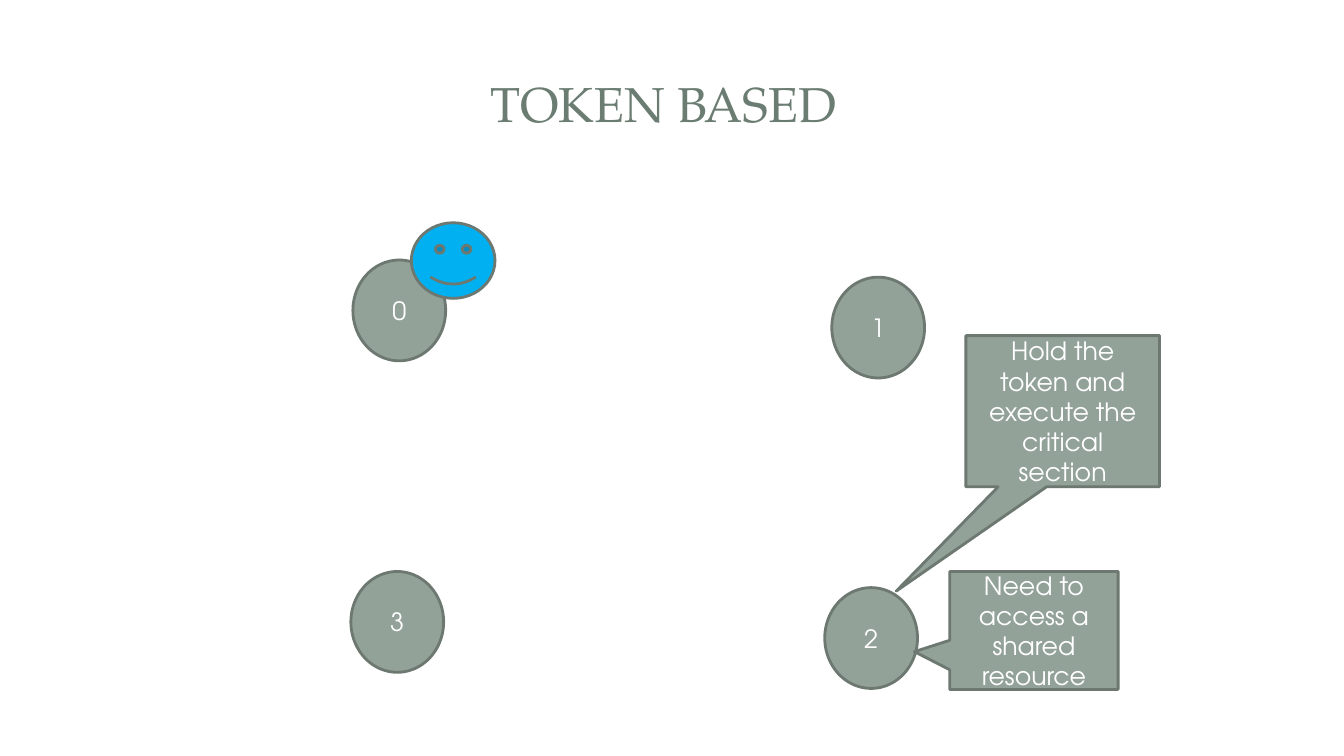
"""Build the token based mutual exclusion slide."""
import pptx
import pptx.util
import pptx.dml.color
import pptx.enum.shapes
import pptx.enum.text

Inches = pptx.util.Inches
Pt = pptx.util.Pt
KIND = pptx.enum.shapes.MSO_SHAPE
HUES = {"title": "6B7D72", "sage": "93A299", "edge": "6D7871",
        "token": "00B0F0", "white": "FFFFFF"}


def write(frame, text, size, font, hue):
    frame.word_wrap = True
    frame.vertical_anchor = pptx.enum.text.MSO_ANCHOR.MIDDLE
    para = frame.paragraphs[0]
    para.alignment = pptx.enum.text.PP_ALIGN.CENTER
    run = para.add_run()
    run.text = text
    run.font.size = Pt(size)
    run.font.name = font
    run.font.color.rgb = pptx.dml.color.RGBColor.from_string(HUES[hue])


def draw(kind, box, fill, text=""):
    shape = slide.shapes.add_shape(kind, *[Inches(v) for v in box])
    shape.shadow.inherit = False
    shape.fill.solid()
    shape.fill.fore_color.rgb = pptx.dml.color.RGBColor.from_string(HUES[fill])
    shape.line.color.rgb = pptx.dml.color.RGBColor.from_string(HUES["edge"])
    shape.line.width = Pt(2)
    if text:
        write(shape.text_frame, text, 18, "TeX Gyre Adventor", "white")
    return shape


deck = pptx.Presentation()
deck.slide_width = Inches(13.33)
deck.slide_height = Inches(7.5)
slide = deck.slides.add_slide(deck.slide_layouts[5])

title = slide.shapes.title
title.left, title.top = Inches(0.62), Inches(0.45)
title.width, title.height = Inches(12.05), Inches(1.14)
write(title.text_frame, "TOKEN BASED ", 35, "TeX Gyre Pagella", "title")

nodes = [("0", 3.5, 2.58), ("3", 3.48, 5.67), ("1", 8.25, 2.75), ("2", 8.18, 5.83)]
for name, left, top in nodes:
    draw(KIND.OVAL, (left, top, 0.92, 1), "sage", name)

draw(KIND.SMILEY_FACE, (4.08, 2.21, 0.83, 0.75), "token")

notes = [
    ("Need to access a shared resource", (9.42, 5.67, 1.67, 1.17), (-0.71, 0.18)),
    ("Hold the token and execute the critical section",
     (9.58, 3.33, 1.92, 1.5), (-0.86, 1.19)),
]
for text, box, tip in notes:
    note = draw(KIND.RECTANGULAR_CALLOUT, box, "sage", text)
    note.adjustments[0], note.adjustments[1] = tip

deck.save("out.pptx")
